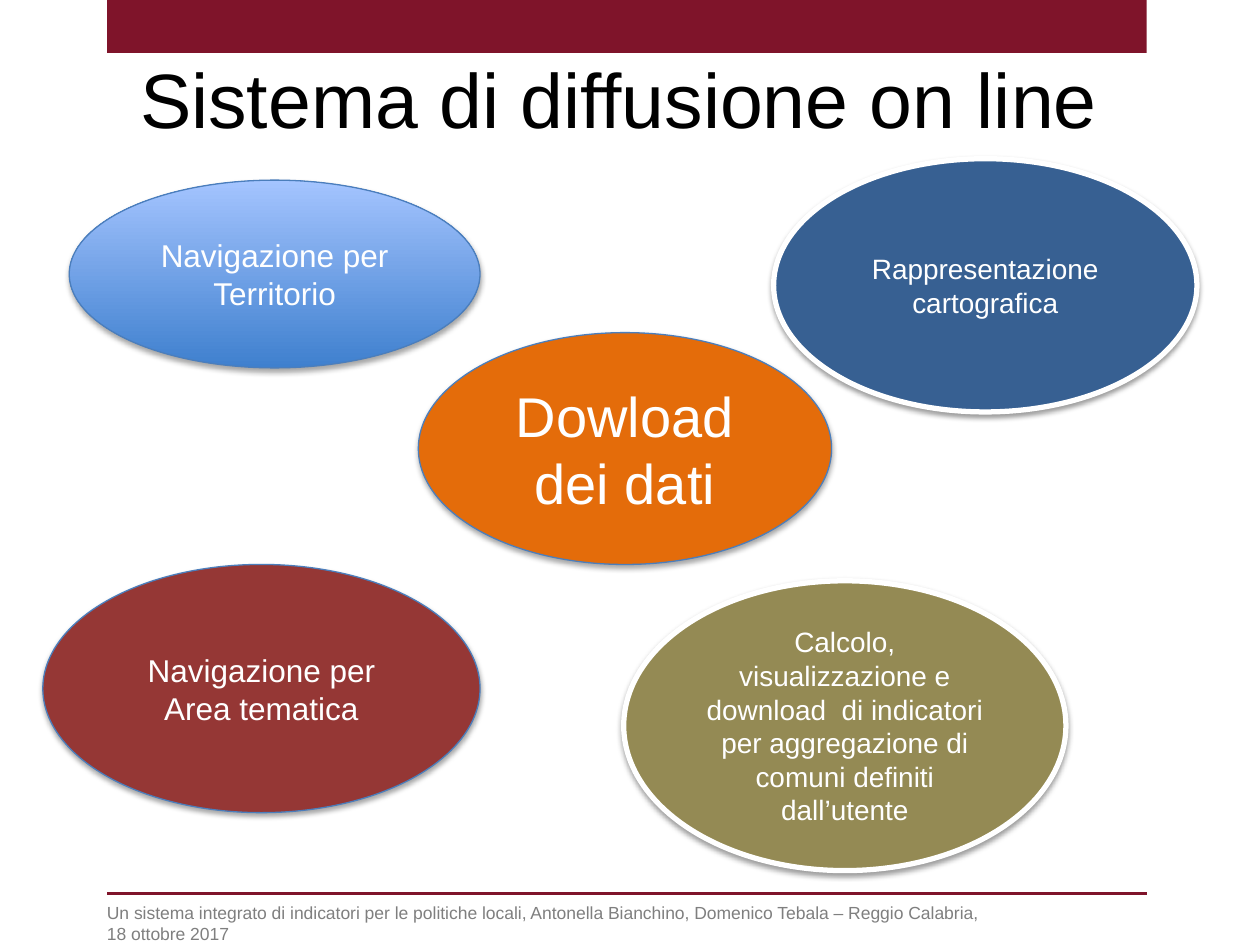
from lxml.etree import SubElement
from pptx import Presentation
from pptx.dml.color import RGBColor
from pptx.enum.shapes import MSO_CONNECTOR as Connector, MSO_SHAPE as Shape
from pptx.enum.text import MSO_ANCHOR as Anchor, PP_ALIGN as Align
from pptx.oxml.ns import qn
from pptx.util import Inches, Pt

FONT = "Arial"
BURGUNDY = RGBColor(0x7F, 0x14, 0x2A)
BLACK = RGBColor(0x00, 0x00, 0x00)
WHITE = RGBColor(0xFF, 0xFF, 0xFF)
GREY = RGBColor(0x7F, 0x7F, 0x7F)
OUTLINE_BLUE = RGBColor(0x4B, 0x7E, 0xBC)
GRADIENT_BOTTOM = RGBColor(0x3F, 0x80, 0xCE)
GRADIENT_TOP = RGBColor(0xA4, 0xC4, 0xFF)
ORANGE = RGBColor(0xE4, 0x6C, 0x0A)
RED = RGBColor(0x95, 0x37, 0x35)
OLIVE = RGBColor(0x94, 0x8A, 0x54)
NAVY = RGBColor(0x37, 0x60, 0x92)

THIN_OUTLINE = (OUTLINE_BLUE, 0.75, 35, 1.8)
WHITE_OUTLINE = (WHITE, 3, 38, 1.6)
ELLIPSES = [
    ((0.55, 1.43, 3.26, 1.49), (GRADIENT_BOTTOM, GRADIENT_TOP), THIN_OUTLINE, 18,
     ["Navigazione per", "Territorio"]),
    ((3.32, 2.64, 3.28, 1.84), (ORANGE,), THIN_OUTLINE, 32, ["Dowload dei dati"]),
    ((0.34, 4.48, 3.47, 1.97), (RED,), THIN_OUTLINE, 18,
     ["Navigazione per", "Area tematica"]),
    ((4.95, 4.61, 3.51, 2.3), (OLIVE,), WHITE_OUTLINE, 16,
     ["Calcolo, visualizzazione e download  di indicatori per aggregazione "
      "di comuni definiti dall’utente"]),
    ((6.14, 1.26, 3.36, 2.01), (NAVY,), WHITE_OUTLINE, 16,
     ["Rappresentazione cartografica"]),
]


def inches(values):
    return [Inches(value) for value in values]


def write(frame, lines, size, color, align):
    frame.word_wrap = True
    for index, line in enumerate(lines):
        para = frame.add_paragraph() if index else frame.paragraphs[0]
        para.alignment = align
        span = para.add_run()
        span.text = line
        span.font.name = FONT
        span.font.size = Pt(size)
        span.font.color.rgb = color


def add_text(slide, place, text, size, color, align):
    box = slide.shapes.add_textbox(*inches(place))
    write(box.text_frame, [text], size, color, align)
    return box.text_frame


def add_shadow(shape, opacity, distance):
    effects = SubElement(shape._element.spPr, qn("a:effectLst"))
    shadow = SubElement(effects, qn("a:outerShdw"), blurRad=str(Pt(3.1)),
                        dist=str(Pt(distance)), dir="5400000", rotWithShape="0")
    color = SubElement(shadow, qn("a:srgbClr"), val=str(BLACK))
    SubElement(color, qn("a:alpha"), val=str(opacity * 1000))


def paint(fill, colors):
    if len(colors) == 1:
        fill.solid()
        fill.fore_color.rgb = colors[0]
        return
    fill.gradient()
    fill.gradient_angle = 90
    for stop, color in zip(fill.gradient_stops, colors):
        stop.color.rgb = color


def add_ellipse(slide, place, colors, outline, size, lines):
    line_color, line_width, opacity, distance = outline
    ellipse = slide.shapes.add_shape(Shape.OVAL, *inches(place))
    paint(ellipse.fill, colors)
    ellipse.line.color.rgb = line_color
    ellipse.line.width = Pt(line_width)
    add_shadow(ellipse, opacity, distance)
    ellipse.text_frame.vertical_anchor = Anchor.MIDDLE
    write(ellipse.text_frame, lines, size, WHITE, Align.CENTER)


def add_frame(slide):
    band = slide.shapes.add_shape(Shape.RECTANGLE, *inches((0.85, 0, 8.25, 0.42)))
    band.shadow.inherit = False
    paint(band.fill, (BURGUNDY,))
    band.line.fill.background()
    rule = slide.shapes.add_connector(Connector.STRAIGHT, *inches((0.85, 7.09, 9.1, 7.09)))
    rule.line.color.rgb = BURGUNDY
    rule.line.width = Pt(2)
    SubElement(rule._element.spPr, qn("a:effectLst"))


def main():
    deck = Presentation()
    deck.slide_width, deck.slide_height = inches((10, 7.5))
    slide = deck.slides.add_slide(deck.slide_layouts[6])
    add_frame(slide)
    title = add_text(slide, (0.5, 0.3, 9, 1.25), "Sistema di diffusione on line",
                     44, BLACK, Align.CENTER)
    title.margin_top = Inches(0.11)
    title.margin_right = Inches(0.27)
    for ellipse in ELLIPSES:
        add_ellipse(slide, *ellipse)
    add_text(slide, (0.75, 7.11, 7.21, 0.44),
             "Un sistema integrato di indicatori per le politiche locali, Antonella "
             "Bianchino, Domenico Tebala – Reggio Calabria, 18 ottobre 2017",
             10, GREY, Align.LEFT)
    deck.save("out.pptx")


if __name__ == "__main__":
    main()
